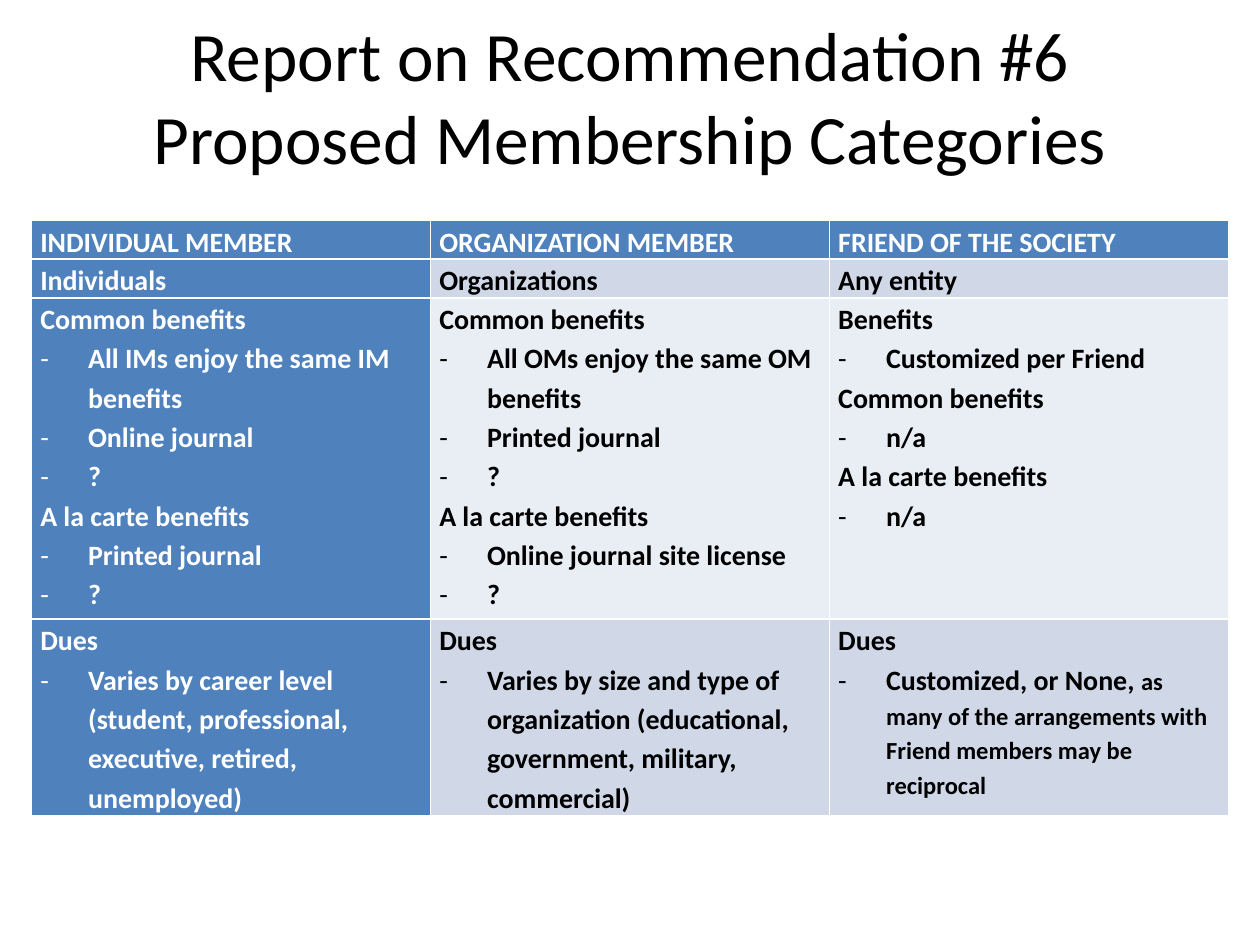
from lxml.etree import SubElement
from pptx import Presentation
from pptx.dml.color import RGBColor
from pptx.enum.text import MSO_ANCHOR, PP_ALIGN
from pptx.oxml.ns import qn
from pptx.util import Inches, Pt

BLUE, WHITE, BLACK = "4F81BD", "FFFFFF", "000000"
BANDS = ["D0D8E8", "E9EDF4"]
ROW_HEIGHTS = [0.3, 0.3, 2.55, 1.56]

# A line that starts with "- " is a bullet; "|" starts the smaller text.
MEMBERSHIP = [
    [["INDIVIDUAL MEMBER"], ["ORGANIZATION MEMBER"], ["FRIEND OF THE SOCIETY"]],
    [["Individuals"], ["Organizations"], ["Any entity"]],
    [
        ["Common benefits", "- All IMs enjoy the same IM benefits",
         "- Online journal", "- ?",
         "A la carte benefits", "- Printed journal", "- ?"],
        ["Common benefits", "- All OMs enjoy the same OM benefits",
         "- Printed journal", "- ?",
         "A la carte benefits", "- Online journal site license", "- ?"],
        ["Benefits", "- Customized per Friend",
         "Common benefits", "- n/a", "A la carte benefits", "- n/a"],
    ],
    [
        ["Dues", "- Varies by career level (student, professional, "
         "executive, retired, unemployed)"],
        ["Dues", "- Varies by size and type of organization "
         "(educational, government, military, commercial)"],
        ["Dues", "- Customized, or None, |as many of the arrangements "
         "with Friend members may be reciprocal"],
    ],
]


def color(hex_string):
    return RGBColor.from_string(hex_string)


class SlideBuilder:
    """Holds the text style and the slide; places are shares of its size."""

    font_name = "Calibri"
    title_size, body_size, small_size = 39.6, 16, 14
    indent = Inches(0.38)
    cell_margin = Inches(0.07)

    def __init__(self, presentation):
        self.width = presentation.slide_width
        self.height = presentation.slide_height
        self.slide = presentation.slides.add_slide(presentation.slide_layouts[6])

    def place(self, left, top, width, height):
        return (round(left * self.width), round(top * self.height),
                round(width * self.width), round(height * self.height))

    def set_font(self, paragraph, size, hex_string, bold=False):
        font = paragraph.font
        font.name, font.size, font.bold = self.font_name, Pt(size), bold
        font.color.rgb = color(hex_string)

    def title(self, text, *share):
        frame = self.slide.shapes.add_textbox(*self.place(*share)).text_frame
        frame.word_wrap = True
        frame.vertical_anchor = MSO_ANCHOR.MIDDLE
        paragraph = frame.paragraphs[0]
        paragraph.text = text
        paragraph.alignment = PP_ALIGN.CENTER
        self.set_font(paragraph, self.title_size, BLACK)

    def bullet(self, paragraph):
        properties = paragraph._p.get_or_add_pPr()
        properties.set("marL", str(self.indent))
        properties.set("indent", str(-self.indent))
        SubElement(properties, qn("a:buFont"), typeface=self.font_name)
        SubElement(properties, qn("a:buChar"), char="-")

    def cell_line(self, paragraph, line, hex_string):
        if line.startswith("- "):
            self.bullet(paragraph)
        main_text, _, small_text = line.removeprefix("- ").partition("|")
        paragraph.add_run().text = main_text
        if small_text:
            run = paragraph.add_run()
            run.text = small_text
            run.font.size = Pt(self.small_size)
        paragraph.line_spacing = 1.15
        self.set_font(paragraph, self.body_size, hex_string, bold=True)

    def cell(self, cell, lines, fill, text_color):
        cell.fill.solid()
        cell.fill.fore_color.rgb = color(fill)
        cell.margin_left = cell.margin_right = self.cell_margin
        cell.margin_top = cell.margin_bottom = 0
        frame = cell.text_frame
        for index, line in enumerate(lines):
            paragraph = frame.add_paragraph() if index else frame.paragraphs[0]
            self.cell_line(paragraph, line, text_color)

    def table(self, rows, row_heights, *share):
        """The first row and column are headings; other cells are banded."""
        table = self.slide.shapes.add_table(
            len(rows), len(rows[0]), *self.place(*share)).table
        table.first_col = True
        for row_index, (row, height) in enumerate(zip(rows, row_heights)):
            table.rows[row_index].height = Inches(height)
            for column_index, lines in enumerate(row):
                heading = row_index == 0 or column_index == 0
                fill = BLUE if heading else BANDS[(row_index - 1) % 2]
                self.cell(table.cell(row_index, column_index), lines,
                          fill, WHITE if heading else BLACK)


def main():
    presentation = Presentation()
    presentation.slide_width, presentation.slide_height = Inches(10), Inches(7.5)
    builder = SlideBuilder(presentation)
    builder.title("Report on Recommendation #6 Proposed Membership Categories",
                  0.05, 0.17 / 7.5, 0.9, 1.17 / 7.5)
    builder.table(MEMBERSHIP, ROW_HEIGHTS,
                  0.025, 1.75 / 7.5, 0.95, sum(ROW_HEIGHTS) / 7.5)
    presentation.save("out.pptx")


if __name__ == "__main__":
    main()
